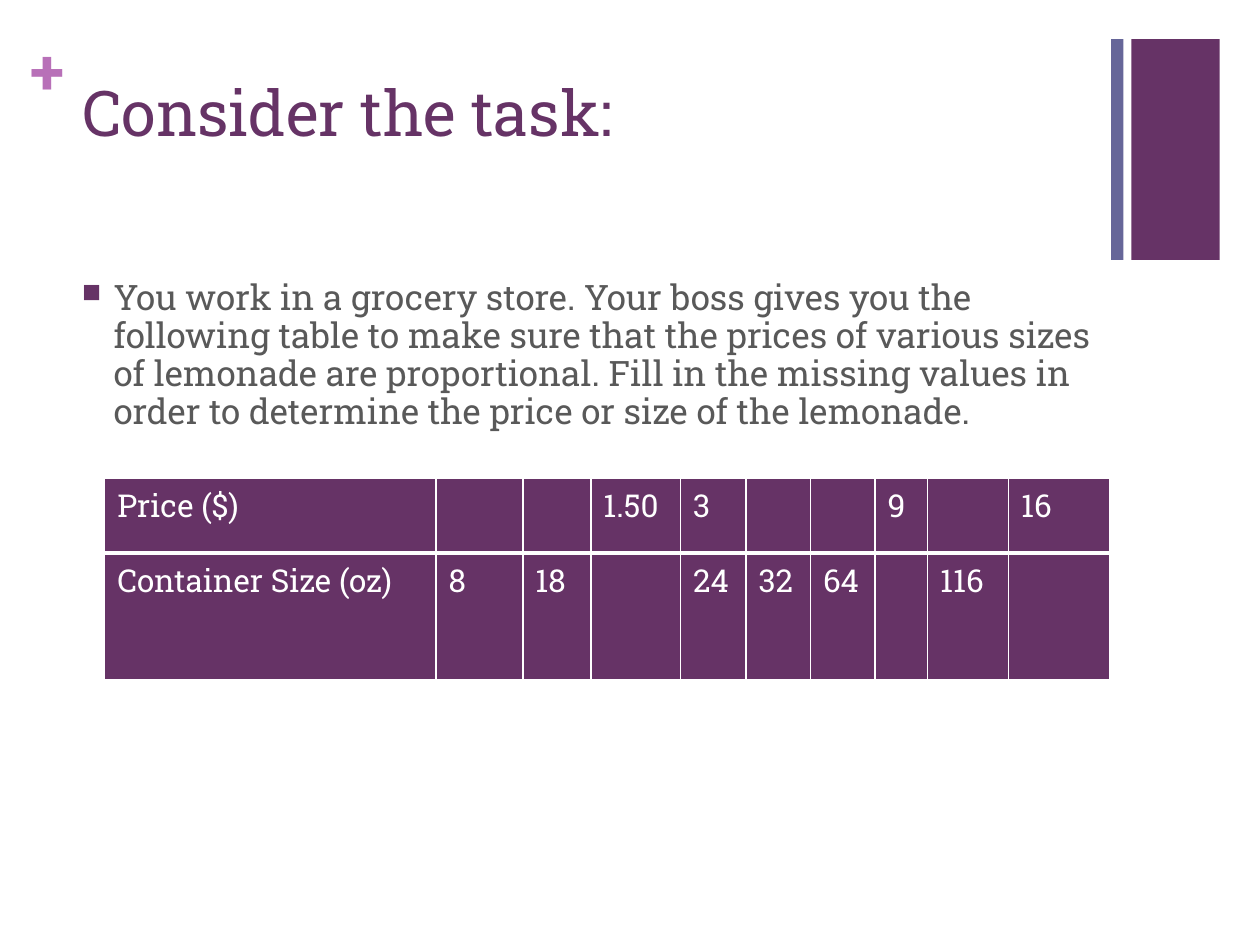
from lxml.etree import SubElement as Sub
from pptx import Presentation
from pptx.dml.color import RGBColor
from pptx.enum.shapes import MSO_SHAPE as Shape
from pptx.enum.text import MSO_ANCHOR as Anchor, PP_ALIGN as Align
from pptx.oxml.ns import qn
from pptx.util import Cm, Pt

PLUM = RGBColor(0x66, 0x33, 0x66)
SLATE = RGBColor(0x66, 0x66, 0x99)
ORCHID = RGBColor(0xB8, 0x70, 0xB8)
GRAY = RGBColor(0x59, 0x59, 0x59)
WHITE = RGBColor(0xFF, 0xFF, 0xFF)
FONT = "Roboto Slab"

TASK = (
    "You work in a grocery store. Your boss gives you the following table "
    "to make sure that the prices of various sizes of lemonade are "
    "proportional. Fill in the missing values in order to determine the "
    "price or size of the lemonade."
)
ROWS = [
    ["Price ($)", "", "", "1.50", "3", "", "", "9", "", "16"],
    ["Container Size (oz)", "8", "18", "", "24", "32", "64", "", "116", ""],
]
WIDTHS = [6.68, 1.75, 1.37, 1.81, 1.32, 1.3, 1.3, 1.06, 1.63, 2.04]
HEIGHTS = [1.5, 2.56]


def style(par, size, color, bold=False):
    par.alignment = Align.LEFT
    for run in par.runs:
        font = run.font
        font.name, font.size, font.bold = FONT, Pt(size), bold
        font.color.rgb = color


def add_bar(slide, left, width, color):
    bar = slide.shapes.add_shape(
        Shape.RECTANGLE, Cm(left), Cm(0.79), Cm(width), Cm(4.45))
    bar.shadow.inherit = False
    bar.fill.solid()
    bar.fill.fore_color.rgb = color
    bar.line.fill.background()


def add_plus(slide):
    box = slide.shapes.add_textbox(Cm(0.61), Cm(0.64), Cm(0.74), Cm(1.55))
    frame = box.text_frame
    frame.margin_left = frame.margin_right = 0
    frame.margin_top = frame.margin_bottom = 0
    frame.text = "+"
    style(frame.paragraphs[0], 36, ORCHID, bold=True)


def set_title(slide):
    title = slide.shapes.title
    title.left, title.top = Cm(1.4), Cm(1.35)
    title.width, title.height = Cm(20.98), Cm(3.1)
    frame = title.text_frame
    frame.text = "Consider the task:"
    frame.vertical_anchor = Anchor.TOP
    style(frame.paragraphs[0], 36, PLUM)


def add_bullet(par):
    """Give the paragraph a hanging square bullet."""
    props = par._p.get_or_add_pPr()
    props.set("marL", str(Cm(0.64)))
    props.set("indent", str(-Cm(0.64)))
    color = Sub(props, qn("a:buClr"))
    Sub(color, qn("a:srgbClr"), val=str(PLUM))
    Sub(props, qn("a:buSzPct"), val="75000")
    Sub(props, qn("a:buChar"), char="■")


def add_body(slide):
    box = slide.shapes.add_textbox(Cm(1.4), Cm(5.51), Cm(20.98), Cm(11.51))
    frame = box.text_frame
    frame.word_wrap = True
    frame.text = TASK
    par = frame.paragraphs[0]
    style(par, 20, GRAY)
    par.space_before = Pt(20)
    par.line_spacing = 0.91
    add_bullet(par)


def add_edge(cell, side, width):
    line = Sub(cell._tc.get_or_add_tcPr(), qn(f"a:ln{side}"), w=str(Pt(width)))
    fill = Sub(line, qn("a:solidFill"))
    Sub(fill, qn("a:srgbClr"), val=str(WHITE))


def fill_cell(cell, text, edges):
    cell.text = text
    style(cell.text_frame.paragraphs[0], 18, WHITE)
    if not text:
        cell.text_frame.paragraphs[0].font.size = Pt(18)
    for side, width in edges.items():
        add_edge(cell, side, width)
    cell.fill.solid()
    cell.fill.fore_color.rgb = PLUM


def add_prices(slide):
    table = slide.shapes.add_table(
        len(ROWS), len(WIDTHS), Cm(2.11), Cm(9.65),
        Cm(sum(WIDTHS)), Cm(sum(HEIGHTS))).table
    for col, width in zip(table.columns, WIDTHS):
        col.width = Cm(width)
    for row, height in zip(table.rows, HEIGHTS):
        row.height = Cm(height)
    for r, texts in enumerate(ROWS):
        # A thick rule parts the two rows.
        edges = {"L": 1, "R": 1, "T": 3 if r else 1, "B": 1 if r else 3}
        for c, text in enumerate(texts):
            fill_cell(table.cell(r, c), text, edges)


def main():
    deck = Presentation()
    deck.slide_width, deck.slide_height = Cm(25.4), Cm(19.05)
    slide = deck.slides.add_slide(deck.slide_layouts[5])
    add_bar(slide, 22.81, 1.78, PLUM)
    add_plus(slide)
    add_bar(slide, 22.4, 0.25, SLATE)
    set_title(slide)
    add_body(slide)
    add_prices(slide)
    deck.save("out.pptx")


if __name__ == "__main__":
    main()
